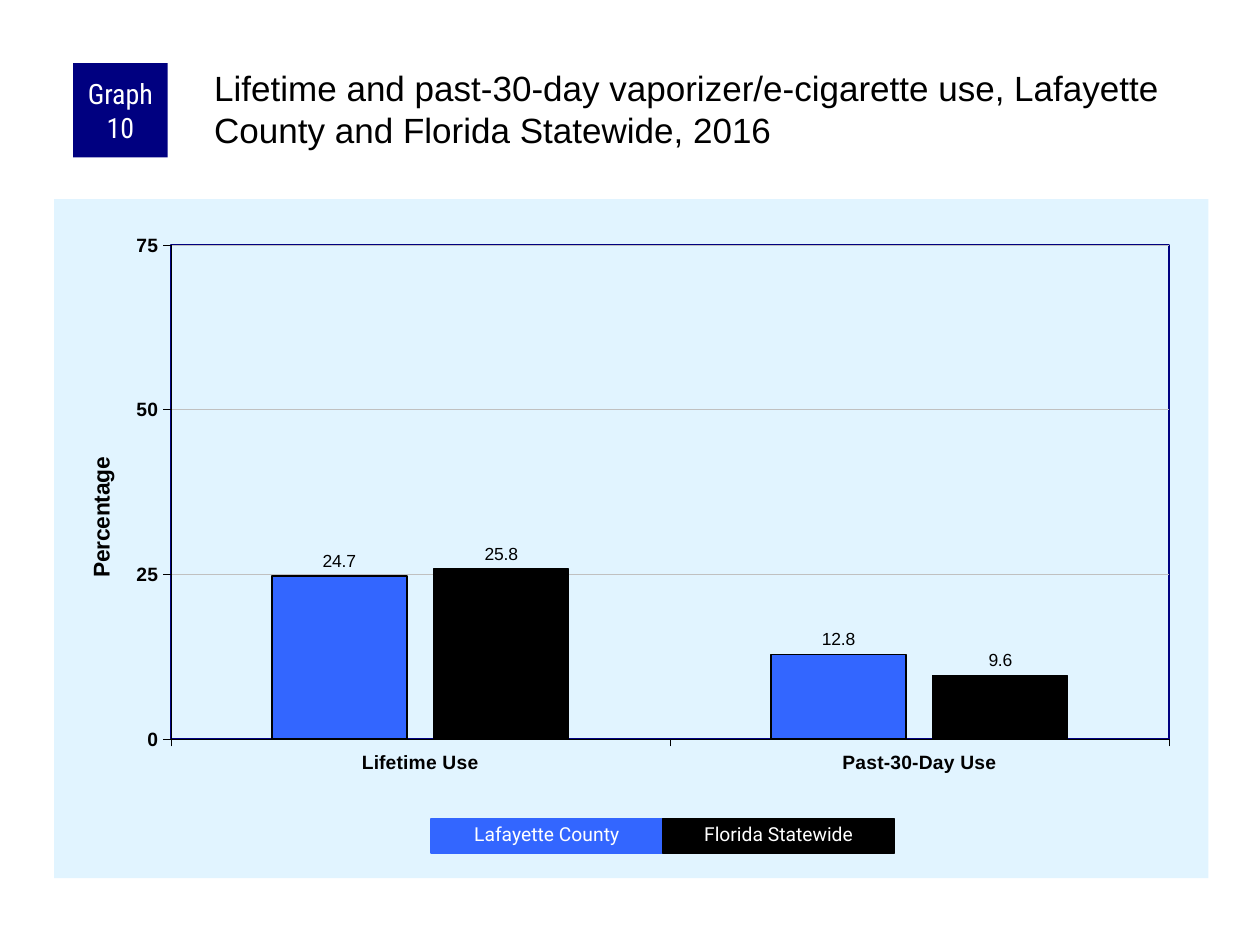
"""Build a slide comparing vaporizer use in a county and statewide."""
from lxml import etree
from pptx import Presentation
from pptx.chart.data import CategoryChartData
from pptx.dml.color import RGBColor
from pptx.enum.chart import XL_CHART_TYPE, XL_LABEL_POSITION, XL_TICK_MARK
from pptx.enum.shapes import MSO_SHAPE
from pptx.enum.text import MSO_ANCHOR, MSO_AUTO_SIZE, PP_ALIGN
from pptx.oxml import parse_xml
from pptx.oxml.ns import nsdecls, qn
from pptx.util import Inches, Pt

COLORS = {
    name: RGBColor.from_string(value)
    for name, value in {
        "navy": "000080", "blue": "3366FF", "black": "000000",
        "white": "FFFFFF", "pale": "E1F4FF", "grid": "C0C0C0",
    }.items()
}


def style_font(font, name, size, color, bold=False):
    font.name, font.size, font.bold = name, Pt(size), bold
    font.color.rgb = COLORS[color]


def set_layout(layout, **places):
    manual = etree.SubElement(layout, qn("c:manualLayout"))
    for tag, value in places.items():
        etree.SubElement(manual, qn(f"c:{tag}")).set("val", str(value))


deck = Presentation()
deck.slide_width, deck.slide_height = Inches(10), Inches(7.5)
page = deck.slides.add_slide(deck.slide_layouts[5])

title = page.shapes.title
title.left, title.top, title.width, title.height = map(Inches, (1.67, 0.5, 7.92, 0.83))
frame = title.text_frame
frame.text = (
    "Lifetime and past-30-day vaporizer/e-cigarette use, "
    "Lafayette County and Florida Statewide, 2016"
)
frame.word_wrap, frame.auto_size = True, MSO_AUTO_SIZE.NONE
frame.vertical_anchor = MSO_ANCHOR.TOP
frame.margin_left = frame.margin_top = Inches(0.03)
frame.margin_right = frame.margin_bottom = 0
frame.paragraphs[0].alignment = PP_ALIGN.LEFT
style_font(frame.paragraphs[0].font, "Arial", 20, "black")

data = CategoryChartData(number_format="0.0")
data.categories = ["Lifetime Use", "Past-30-Day Use"]
data.add_series("Lafayette County", (24.7, 12.8))
data.add_series("Florida Statewide", (25.8, 9.6))
chart = page.shapes.add_chart(
    XL_CHART_TYPE.COLUMN_CLUSTERED, *map(Inches, (0.43, 1.58, 9.16, 5.39)), data
).chart
chart.has_legend = chart.has_title = False
style_font(chart.font, "Arial", 11.5, "black")

for axis in (chart.category_axis, chart.value_axis):
    axis.major_tick_mark, axis.minor_tick_mark = XL_TICK_MARK.OUTSIDE, XL_TICK_MARK.NONE
    axis.format.line.color.rgb = COLORS["black"]
    axis.format.line.width = Pt(0.25)
    style_font(axis.tick_labels.font, "Arial", 11, "black", True)

scale = chart.value_axis
scale.minimum_scale, scale.maximum_scale, scale.major_unit = 0, 75, 25
scale.tick_labels.number_format = "0"
scale.tick_labels.number_format_is_linked = False
scale.major_gridlines.format.line.color.rgb = COLORS["grid"]
scale.major_gridlines.format.line.width = Pt(0.25)
caption = scale.axis_title.text_frame
caption.text = "Percentage"
style_font(caption.paragraphs[0].font, "Arial", 13, "black", True)
caption_xml = scale.axis_title._element
caption_xml.find(".//" + qn("a:bodyPr")).set("rot", "-5400000")
set_layout(caption_xml.get_or_add_layout() if hasattr(caption_xml, "get_or_add_layout")
           else caption_xml.find(qn("c:layout")),
           xMode="edge", yMode="edge", x=0.025, y=0.374)

plot = chart.plots[0]
plot.gap_width, plot.overlap, plot.vary_by_categories = 150, -20, False
for series, color, width in zip(plot.series, ("blue", "black"), (1, 0.75)):
    series.format.fill.solid()
    series.format.fill.fore_color.rgb = COLORS[color]
    series.format.line.color.rgb = COLORS["black"]
    series.format.line.width = Pt(width)
    labels = series.data_labels
    labels.show_value, labels.position = True, XL_LABEL_POSITION.OUTSIDE_END
    labels.number_format, labels.number_format_is_linked = "0.0", False
    style_font(labels.font, "Arial", 10, "black")

space = chart._chartSpace
area = space.find(".//" + qn("c:plotArea"))
for old in area.findall(qn("c:layout")):
    area.remove(old)
layout = etree.Element(qn("c:layout"))
area.insert(0, layout)
set_layout(layout, layoutTarget="inner", xMode="edge", yMode="edge",
           x=0.101, y=0.068, w=0.865, h=0.727)
area.append(parse_xml(
    f'<c:spPr {nsdecls("c", "a")}><a:noFill/><a:ln w="{Pt(1)}"><a:solidFill>'
    f'<a:srgbClr val="{COLORS["navy"]}"/></a:solidFill></a:ln></c:spPr>'))
space.find(qn("c:chart")).addnext(parse_xml(
    f'<c:spPr {nsdecls("c", "a")}><a:solidFill><a:srgbClr val="{COLORS["pale"]}"/>'
    "</a:solidFill><a:ln><a:noFill/></a:ln></c:spPr>"))

key_left, key_width = 3.42, 1.84
boxes = [
    ("Graph 10", (0.58, 0.5, 0.75, 0.75), "navy", "Roboto Condensed", 16),
    ("Lafayette County", (key_left, 6.5, key_width, 0.27), "blue", "Roboto", 11),
    ("Florida Statewide", (key_left + key_width, 6.5, key_width, 0.27), "black", "Roboto", 11),
]
for text, place, color, font_name, size in boxes:
    box = page.shapes.add_shape(MSO_SHAPE.RECTANGLE, *map(Inches, place))
    box.shadow.inherit = False
    box.fill.solid()
    box.fill.fore_color.rgb = COLORS[color]
    frame = box.text_frame
    frame.text, frame.word_wrap = text, True
    para = frame.paragraphs[0]
    para.alignment = PP_ALIGN.CENTER
    style_font(para.font, font_name, size, "white")
    if color == "navy":
        box.line.fill.background()
        frame.vertical_anchor = MSO_ANCHOR.MIDDLE
        frame.margin_left = frame.margin_right = Inches(0.05)
        frame.margin_top = frame.margin_bottom = 0
    else:
        box.line.color.rgb = COLORS[color]
        box.line.width = Pt(0.75)
        frame.vertical_anchor = MSO_ANCHOR.TOP
        frame.auto_size = MSO_AUTO_SIZE.SHAPE_TO_FIT_TEXT
        para.line_spacing = 0.9

deck.save("out.pptx")
